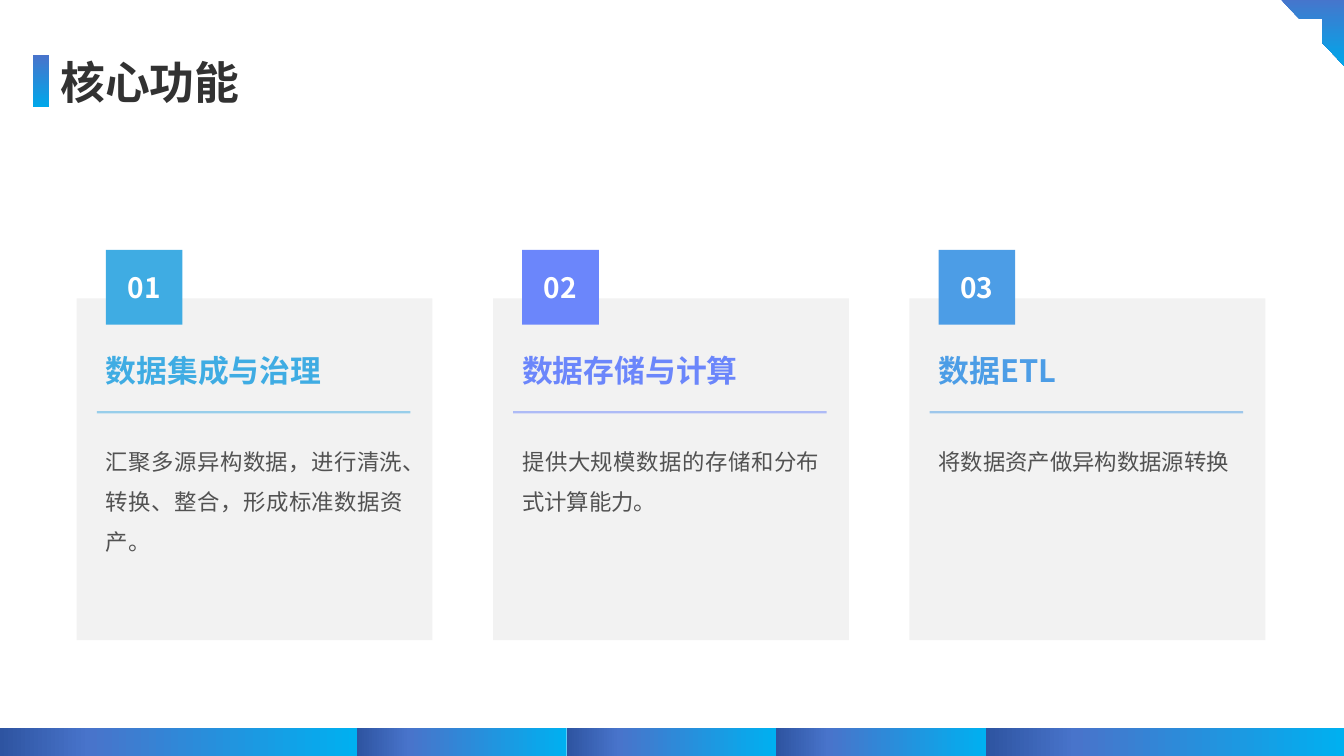
from lxml import etree
from pptx import Presentation
from pptx.dml.color import RGBColor
from pptx.enum.shapes import MSO_CONNECTOR, MSO_SHAPE
from pptx.enum.text import MSO_ANCHOR, MSO_AUTO_SIZE, PP_ALIGN
from pptx.oxml.ns import qn
from pptx.util import Inches, Pt

RECTANGLE, HALF_FRAME = MSO_SHAPE.RECTANGLE, MSO_SHAPE.HALF_FRAME
STRAIGHT = MSO_CONNECTOR.STRAIGHT
TOP, MIDDLE = MSO_ANCHOR.TOP, MSO_ANCHOR.MIDDLE
LEFT, CENTER, JUSTIFY = PP_ALIGN.LEFT, PP_ALIGN.CENTER, PP_ALIGN.JUSTIFY
FIT_SHAPE = MSO_AUTO_SIZE.SHAPE_TO_FIT_TEXT

FONT = "Noto Sans CJK SC"
WHITE, TITLE_COLOR, BODY_COLOR, PANEL_COLOR = "FFFFFF", "323232", "525252", "ADADAD"
ACCENT_STOPS = [(0, "4874CB"), (100, "00A7EA")]
FOOTER_STOPS = [(0, "00B0F0"), (75, "4874CB"), (100, "2E54A1")]
CARDS = [
    ("01", "数据集成与治理", "汇聚多源异构数据，进行清洗、转换、整合，形成标准数据资产。", "3FACE3"),
    ("02", "数据存储与计算", "提供大规模数据的存储和分布式计算能力。", "6B86FB"),
    ("03", "数据ETL", "将数据资产做异构数据源转换", "4C9DE6"),
]


def color(value):
    return RGBColor.from_string(value)


def lengths(box):
    return [Inches(value) for value in box]


def set_alpha(fill, percent):
    """Make the solid color of a fill or line see-through."""
    for tone in fill.iter(qn("a:srgbClr")):
        etree.SubElement(tone, qn("a:alpha"), val=str(percent * 1000))


def set_gradient(shape, stops, angle):
    """Fill with a linear gradient; the angle runs clockwise."""
    shape.fill.gradient()
    shape.fill.gradient_angle = 360 - angle
    stop_list = next(shape._element.iter(qn("a:gsLst")))
    for old_stop in list(stop_list):
        stop_list.remove(old_stop)
    for position, tone in stops:
        stop = etree.SubElement(stop_list, qn("a:gs"), pos=str(position * 1000))
        etree.SubElement(stop, qn("a:srgbClr"), val=tone)


def add_block(shapes, box, kind=RECTANGLE, fill=None):
    block = shapes.add_shape(kind, *lengths(box))
    block.shadow.inherit = False
    block.line.fill.background()
    if fill:
        block.fill.solid()
        block.fill.fore_color.rgb = color(fill)
    return block


def write(shape, text, tone, frame_format, para_format, font_format):
    frame = shape.text_frame
    para = frame.paragraphs[0]
    span = para.add_run()
    span.text = text
    span.font.color.rgb = color(tone)
    formats = [(frame, frame_format), (para, para_format),
               (span.font, {"name": FONT, **font_format})]
    for target, values in formats:
        for name, value in values.items():
            setattr(target, name, value)
    etree.SubElement(span.font._element, qn("a:ea"), typeface=FONT)


def frame_values(anchor, wrap=True):
    margins = {f"margin_{side}": 0 for side in ("left", "top", "right", "bottom")}
    return {"word_wrap": wrap, "vertical_anchor": anchor, **margins}


def add_heading(slide, left, top, text):
    title = slide.shapes.add_textbox(*lengths((left + 0.17, top - 0.06, 1.98, 0.64)))
    write(title, text, TITLE_COLOR, {"word_wrap": False, "auto_size": FIT_SHAPE},
          {"alignment": LEFT}, {"size": Pt(32), "bold": True})
    bar = add_block(slide.shapes, (left, top, 0.16, 0.51))
    set_gradient(bar, ACCENT_STOPS, 90)


def add_corner(slide, box):
    corner = add_block(slide.shapes, box, HALF_FRAME)
    corner._element.spPr.find(qn("a:xfrm")).set("flipH", "1")
    set_gradient(corner, ACCENT_STOPS, 90)


def add_footer(slide, top, height):
    band = slide.shapes.add_group_shape()
    left = 0
    for width in (3.54, 2.08, 2.08, 2.08, 3.55):
        strip = add_block(band.shapes, (left, top, width, height))
        set_gradient(strip, FOOTER_STOPS, 180)
        left += width


def add_card(slide, box, number, heading, body, tone):
    left, top, width, height = box
    inner, inner_width = left + 0.29, 2.95

    # Panel
    panel = add_block(slide.shapes, box, fill=PANEL_COLOR)
    set_alpha(panel._element.spPr, 15)

    # Description
    description = slide.shapes.add_textbox(*lengths((inner, top + 1.35, inner_width, 1.75)))
    write(description, body, BODY_COLOR, frame_values(TOP),
          {"alignment": JUSTIFY, "line_spacing": 1.5}, {"size": Pt(16)})

    # Number badge
    badge = add_block(slide.shapes, (inner, top - 0.48, 0.76, 0.74), fill=tone)
    write(badge, number, WHITE, frame_values(MIDDLE, False),
          {"alignment": CENTER}, {"size": Pt(20), "bold": True})

    # Heading
    label = slide.shapes.add_textbox(*lengths((inner, top + 0.47, inner_width, 0.48)))
    write(label, heading, tone, frame_values(MIDDLE),
          {"alignment": LEFT}, {"size": Pt(22), "bold": True})

    # Divider
    start, level = left + 0.2, top + 1.13
    divider = slide.shapes.add_connector(
        STRAIGHT, *lengths((start, level, start + 3.11, level)))
    divider.line.color.rgb = color(tone)
    divider.line.width = Pt(1.75)
    set_alpha(divider._element.spPr, 50)
    etree.SubElement(divider._element.spPr, qn("a:effectLst"))


def main():
    deck = Presentation()
    deck.slide_width, deck.slide_height = Inches(13.33), Inches(7.5)
    slide = deck.slides.add_slide(deck.slide_layouts[6])
    add_heading(slide, 0.33, 0.55, "核心功能")
    add_corner(slide, (12.68, -0.03, 0.65, 0.68))
    add_footer(slide, 7.22, 0.35)
    for index, card in enumerate(CARDS):
        add_card(slide, (0.76 + 4.13 * index, 2.96, 3.53, 3.39), *card)
    deck.save("out.pptx")


if __name__ == "__main__":
    main()
